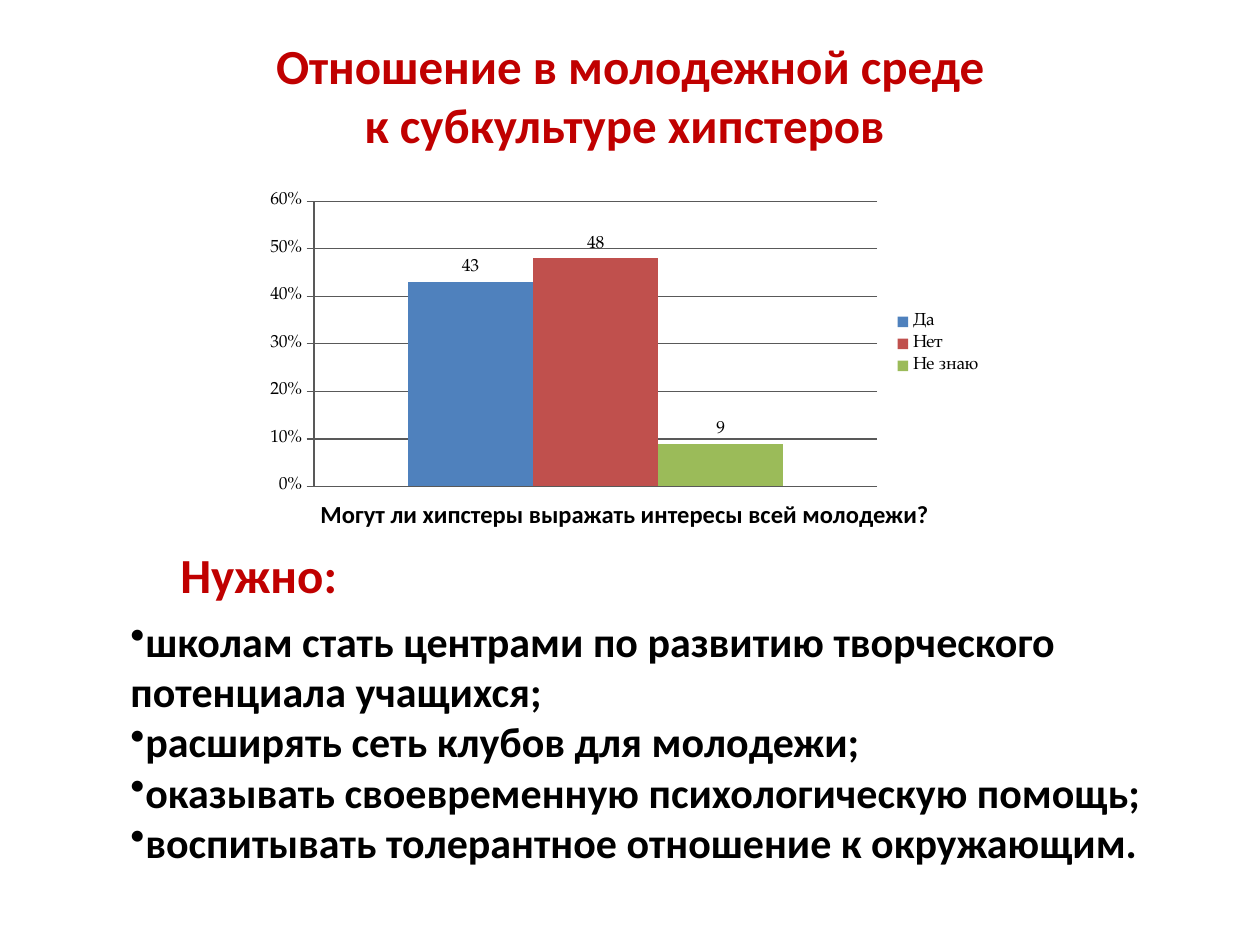
from pptx import Presentation
from pptx.chart.data import CategoryChartData
from pptx.dml.color import RGBColor
from pptx.enum import chart as ch, text
from pptx.oxml import parse_xml
from pptx.oxml.ns import nsdecls
from pptx.util import Pt

RED, BLACK, GRID = "C00000", "000000", "595959"
ANSWERS = [("Да", 43, "4F81BD"), ("Нет", 48, "C0504D"), ("Не знаю", 9, "9BBB59")]
NEEDS = [
    "школам стать центрами по развитию творческого потенциала учащихся;",
    "расширять сеть клубов для молодежи;",
    "оказывать своевременную психологическую помощь;",
    "воспитывать толерантное отношение к окружающим.",
]


def rgb(color):
    return RGBColor.from_string(color)


def set_font(font, name, size, color, bold=False):
    font.name, font.size, font.bold = name, Pt(size), bold
    font.color.rgb = rgb(color)


def place(sp, left, top, width, height):
    sp.left, sp.top, sp.width, sp.height = map(Pt, (left, top, width, height))


def write(sp, lines, size=24, color=BLACK, align=text.PP_ALIGN.LEFT, bullet=None):
    """Fill a shape with bold paragraphs, one per line."""
    tf = sp.text_frame
    tf.word_wrap = True
    tf.auto_size = text.MSO_AUTO_SIZE.SHAPE_TO_FIT_TEXT
    tf.vertical_anchor = text.MSO_ANCHOR.TOP
    for i, line in enumerate(lines):
        p = tf.add_paragraph() if i else tf.paragraphs[0]
        p.alignment = align
        if bullet:
            p._p.get_or_add_pPr().append(
                parse_xml(f'<a:buChar {nsdecls("a")} char="{bullet}"/>'))
        r = p.add_run()
        r.text = line
        set_font(r.font, "Calibri", size, color, bold=True)


def add_text(s, box, lines, **fmt):
    write(s.shapes.add_textbox(*map(Pt, box)), lines, **fmt)


def add_survey_chart(s, box):
    data = CategoryChartData()
    data.categories = ["1"]
    for name, value, _ in ANSWERS:
        data.add_series(name, [value])
    chart = s.shapes.add_chart(
        ch.XL_CHART_TYPE.COLUMN_CLUSTERED, *map(Pt, box), data).chart
    set_font(chart.font, "TeX Gyre Pagella", 10, BLACK)
    chart.has_title = False
    chart.has_legend = True
    chart.legend.position = ch.XL_LEGEND_POSITION.RIGHT
    chart.legend.include_in_layout = False

    chart.category_axis.visible = False
    axis = chart.value_axis
    axis.minimum_scale, axis.maximum_scale, axis.major_unit = 0, 60, 10
    axis.major_tick_mark = ch.XL_TICK_MARK.CROSS
    axis.tick_labels.number_format = "General\\%"
    axis.tick_labels.number_format_is_linked = False
    for line in (axis.format.line, axis.major_gridlines.format.line):
        line.color.rgb = rgb(GRID)
        line.width = Pt(0.75)

    plot = chart.plots[0]
    plot.gap_width, plot.overlap, plot.vary_by_categories = 150, 0, False
    for series, (_, _, color) in zip(plot.series, ANSWERS):
        series.format.fill.solid()
        series.format.fill.fore_color.rgb = rgb(color)
        series.data_labels.show_value = True
        series.data_labels.position = ch.XL_LABEL_POSITION.OUTSIDE_END


def main():
    prs = Presentation()
    prs.slide_width, prs.slide_height = Pt(720), Pt(540)
    s = prs.slides.add_slide(prs.slide_layouts[5])

    place(s.shapes.title, 0, 16.5, 720, 75)
    center = text.PP_ALIGN.CENTER
    write(s.shapes.title, ["Отношение в молодежной среде", "к субкультуре хипстеров "],
          size=28, color=RED, align=center)
    add_survey_chart(s, (146, 106.5, 422, 180))
    add_text(s, (146, 281.5, 422, 24.5),
             ["Могут ли хипстеры выражать интересы всей молодежи?"],
             size=14, align=center)
    add_text(s, (96, 307.5, 427, 41), ["Нужно:"], size=28, color=RED)
    add_text(s, (67.5, 348, 596, 152.5), NEEDS, bullet="•")
    prs.save("out.pptx")


if __name__ == "__main__":
    main()
